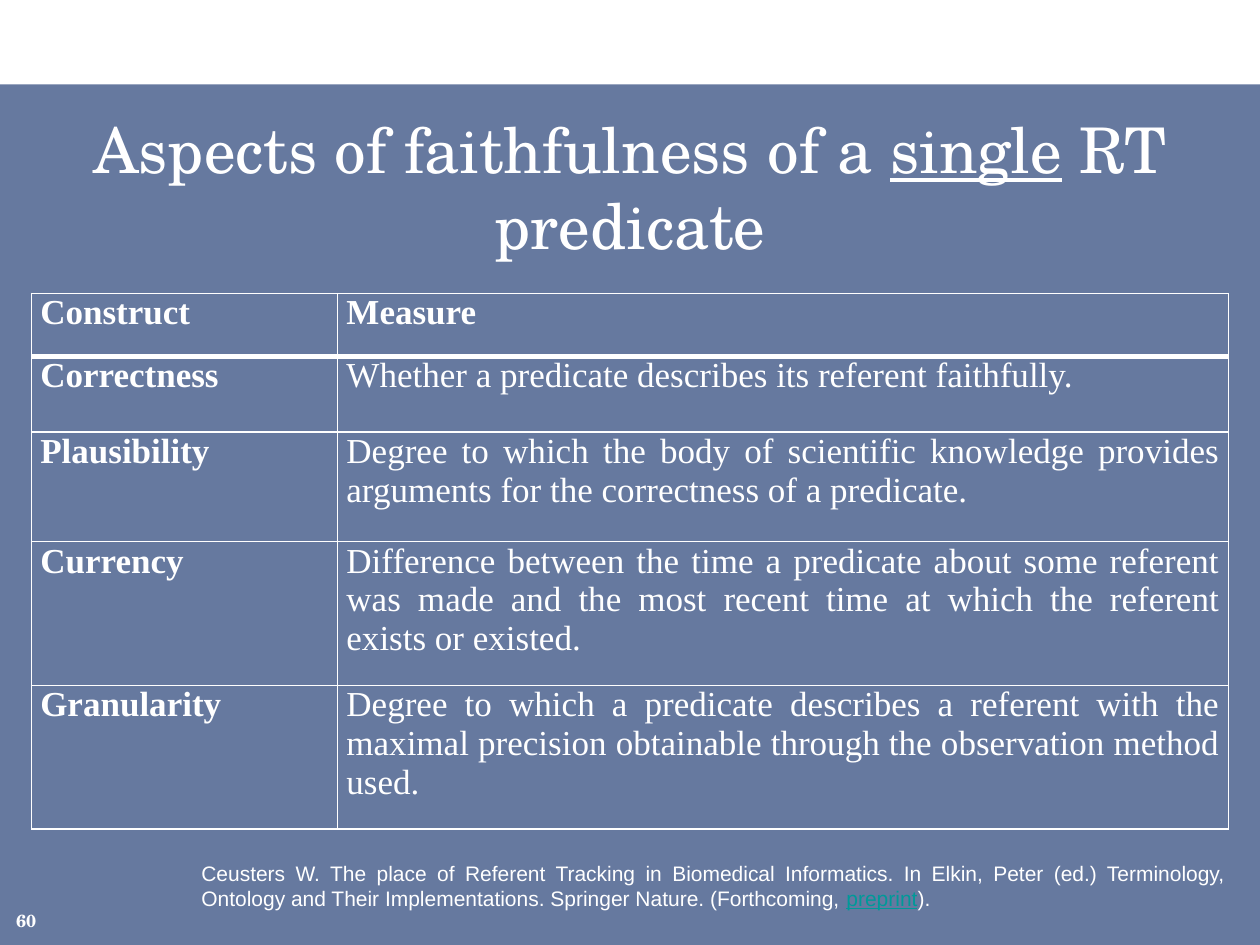
from dataclasses import dataclass

from lxml.etree import SubElement
from pptx import Presentation
from pptx.dml.color import RGBColor
from pptx.enum.shapes import MSO_SHAPE
from pptx.enum.text import MSO_ANCHOR, PP_ALIGN
from pptx.oxml.ns import qn
from pptx.util import Inches, Pt


@dataclass(frozen=True)
class Theme:
    panel: str = "002060"
    panel_opacity: int = 60
    ink: str = "FFFFFF"
    link: str = "009999"
    display: str = "TeX Gyre Schola"
    serif: str = "Times New Roman"
    sans: str = "Arial"
    title_size: int = 36
    table_size: int = 20
    citation_size: int = 12
    number_size: int = 10
    thin: int = 1
    thick: int = 3


THEME = Theme()

TITLE = [
    ("Aspects of faithfulness of a ", {}),
    ("single", {"underline": True}),
    (" RT predicate", {}),
]
ROWS = [
    ("Construct", "Measure"),
    ("Correctness", "Whether a predicate describes its referent faithfully."),
    ("Plausibility", "Degree to which the body of scientific knowledge provides "
     "arguments for the correctness of a predicate."),
    ("Currency", "Difference between the time a predicate about some referent was made "
     "and the most recent time at which the referent exists or existed."),
    ("Granularity", "Degree to which a predicate describes a referent with the maximal "
     "precision obtainable through the observation method used."),
]
COLUMN_WIDTHS = [2.43, 7.07]
ROW_HEIGHTS = [0.5, 0.6, 0.87, 1.14, 1.14]
CITATION = [
    ("Ceusters W. The place of Referent Tracking in Biomedical Informatics. In Elkin, "
     "Peter (ed.) Terminology, Ontology and Their Implementations. Springer Nature. "
     "(Forthcoming, ", {}),
    ("preprint", {"color": THEME.link, "underline": True}),
    (").", {}),
]
PAGE_NUMBER = [("60", {"bold": True})]


def write(frame, spans, font, size, align):
    paragraph = frame.paragraphs[0]
    paragraph.alignment = align
    for text, style in spans:
        span = paragraph.add_run()
        span.text = text
        span.font.name = font
        span.font.size = Pt(size)
        span.font.bold = style.get("bold", False)
        span.font.underline = style.get("underline", False)
        span.font.color.rgb = RGBColor.from_string(style.get("color", THEME.ink))


def add_text(page, place, spans, font, size, align, wrap=True):
    box = page.shapes.add_textbox(*map(Inches, place))
    box.text_frame.word_wrap = wrap
    write(box.text_frame, spans, font, size, align)


def add_panel(page):
    panel = page.shapes.add_shape(
        MSO_SHAPE.RECTANGLE, *map(Inches, (0, 0.67, 10, 6.83)))
    panel.shadow.inherit = False
    panel.line.fill.background()
    panel.fill.solid()
    panel.fill.fore_color.rgb = RGBColor.from_string(THEME.panel)
    color = panel.fill._xPr.find(".//" + qn("a:srgbClr"))
    SubElement(color, qn("a:alpha"), val=str(THEME.panel_opacity * 1000))


def set_borders(cell, widths):
    """Draw the left, right, top and bottom borders, placed ahead of the cell fill."""
    properties = cell._tc.get_or_add_tcPr()
    for index, (side, width) in enumerate(zip("LRTB", widths)):
        line = SubElement(properties, qn("a:ln" + side), w=str(Pt(width)))
        fill = SubElement(line, qn("a:solidFill"))
        SubElement(fill, qn("a:srgbClr"), val=THEME.ink)
        properties.insert(index, line)


def add_measures(page):
    table = page.shapes.add_table(
        len(ROWS), len(COLUMN_WIDTHS), Inches(0.25), Inches(2.33),
        Inches(sum(COLUMN_WIDTHS)), Inches(sum(ROW_HEIGHTS))).table
    table.first_row = False
    table.horz_banding = False
    for column, width in zip(table.columns, COLUMN_WIDTHS):
        column.width = Inches(width)
    for r, (texts, height) in enumerate(zip(ROWS, ROW_HEIGHTS)):
        table.rows[r].height = Inches(height)
        top = THEME.thick if r == 1 else THEME.thin
        bottom = THEME.thick if r == 0 else THEME.thin
        for c, text in enumerate(texts):
            cell = table.cell(r, c)
            cell.margin_left = cell.margin_right = Inches(0.07)
            cell.margin_top = cell.margin_bottom = 0
            cell.vertical_anchor = MSO_ANCHOR.TOP
            cell.fill.background()
            set_borders(cell, (THEME.thin, THEME.thin, top, bottom))
            write(cell.text_frame, [(text, {"bold": r == 0 or c == 0})],
                  THEME.serif, THEME.table_size, PP_ALIGN.JUSTIFY)


def main():
    deck = Presentation()
    deck.slide_width, deck.slide_height = Inches(10), Inches(7.5)
    page = deck.slides.add_slide(deck.slide_layouts[6])
    add_panel(page)
    add_text(page, (0.03, 7.17, 0.39, 0.25), PAGE_NUMBER,
             THEME.display, THEME.number_size, PP_ALIGN.LEFT, wrap=False)
    add_text(page, (0.25, 0.83, 9.5, 0.83), TITLE,
             THEME.display, THEME.title_size, PP_ALIGN.CENTER)
    add_measures(page)
    add_text(page, (1.5, 6.78, 8.33, 0.5), CITATION,
             THEME.sans, THEME.citation_size, PP_ALIGN.JUSTIFY)
    deck.save("out.pptx")


if __name__ == "__main__":
    main()
